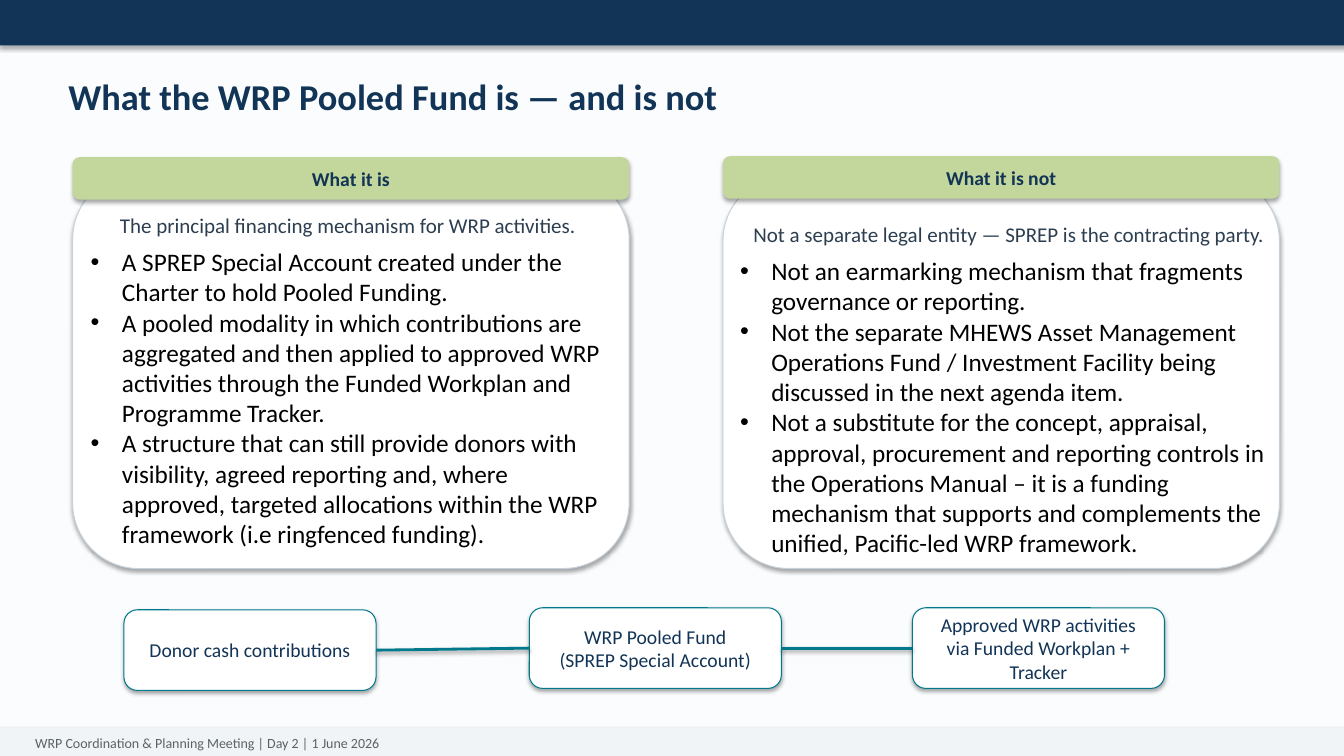
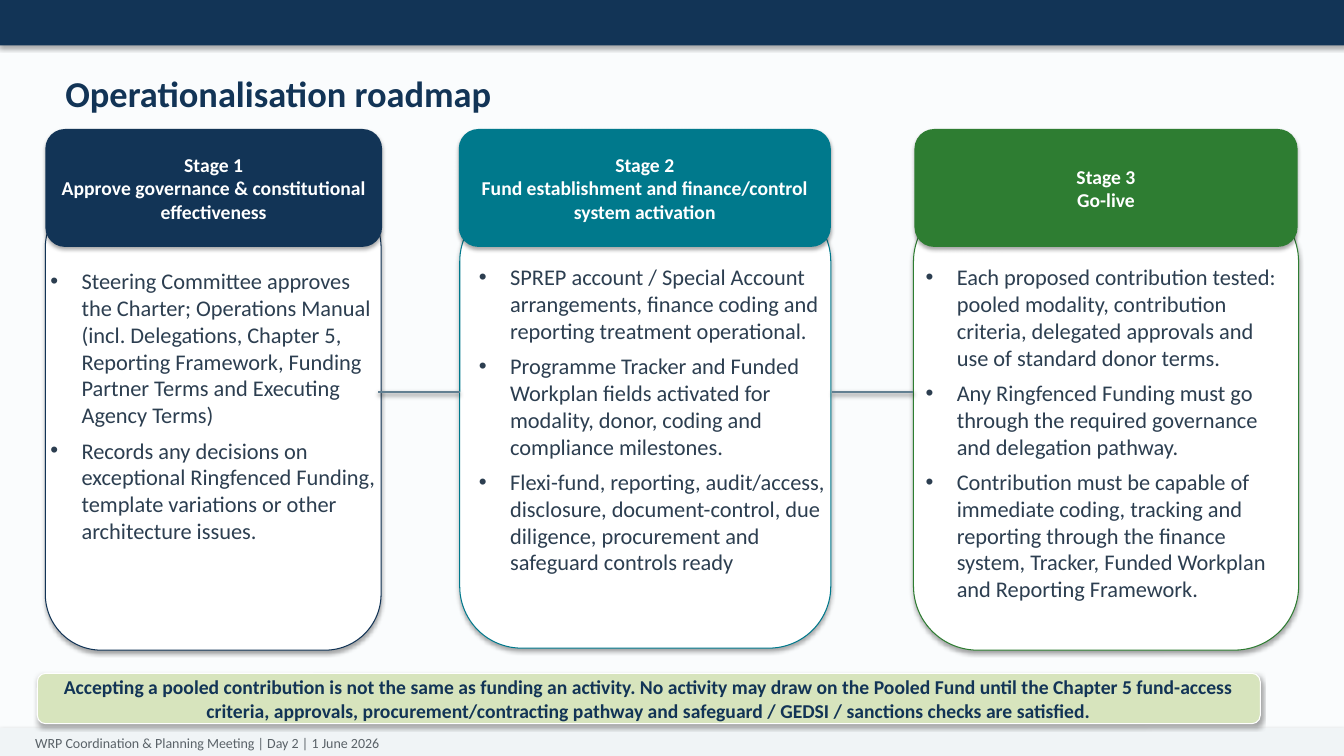
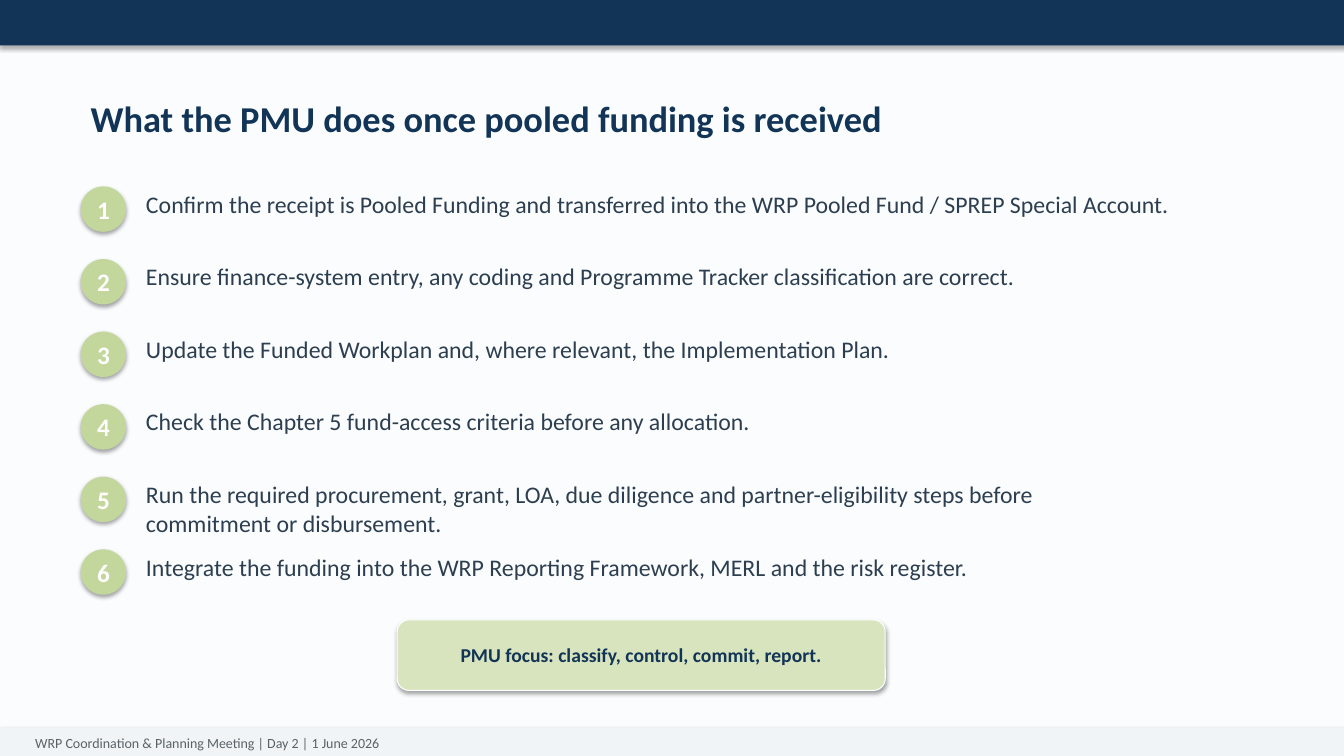
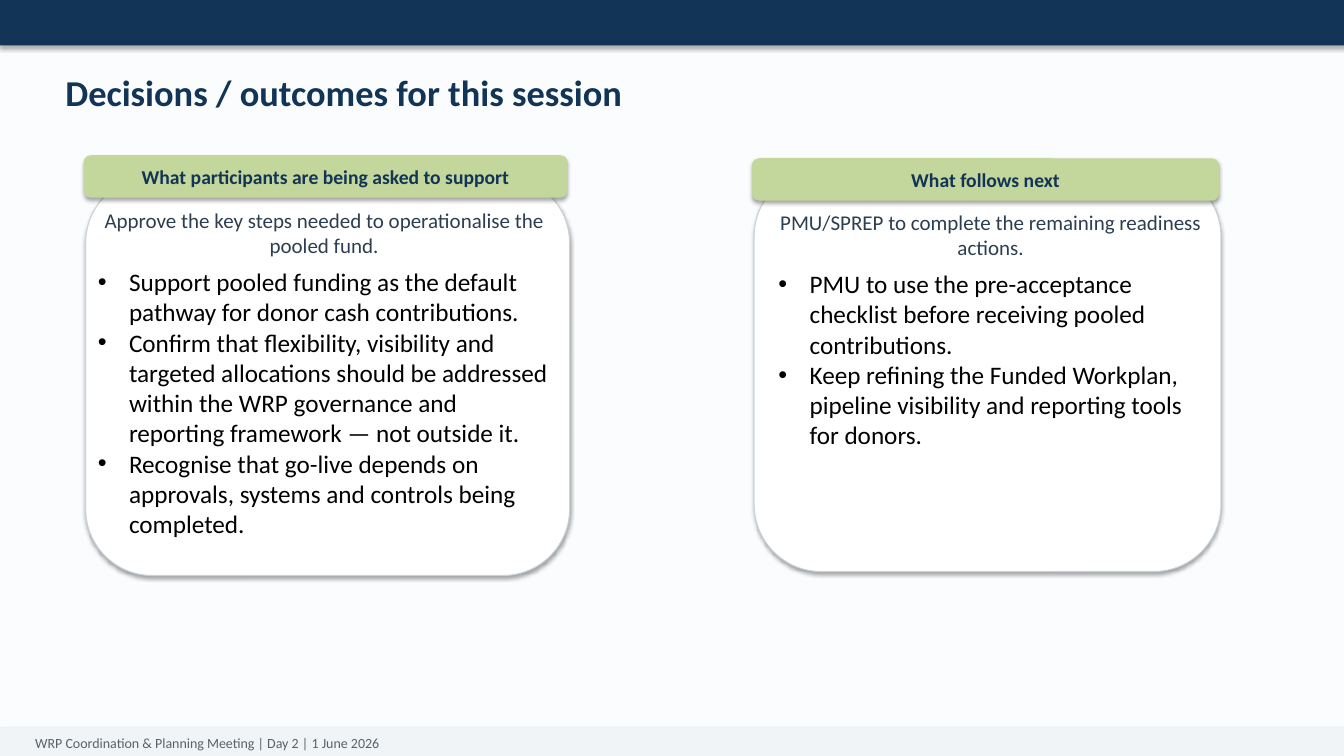
import copy
import dataclasses

import pptx
import pptx.dml.color
import pptx.enum.shapes
import pptx.enum.text
import pptx.oxml
import pptx.oxml.ns
import pptx.util

Inches = pptx.util.Inches
Pt = pptx.util.Pt
Align = pptx.enum.text.PP_ALIGN
Anchor = pptx.enum.text.MSO_ANCHOR
Preset = pptx.enum.shapes.MSO_SHAPE
qn = pptx.oxml.ns.qn


@dataclasses.dataclass(frozen=True)
class Theme:
    font: str = "Calibri"
    background: str = "FAFCFD"
    navy: str = "123456"
    teal: str = "00798C"
    green: str = "2E7D32"
    lime: str = "C3D69B"
    pale_lime: str = "D7E4BD"
    white: str = "FFFFFF"
    black: str = "000000"
    slate: str = "2C3E50"
    steel: str = "627F91"
    card_edge: str = "C8D2DC"
    footer_fill: str = "F0F4F6"
    footer_text: str = "5A6268"
    title_size: float = 26
    body_size: float = 18
    step_size: float = 17
    stage_size: float = 16
    lead_size: float = 15
    label_size: float = 14
    footer_size: float = 10
    thin: float = 0.75
    thick: float = 2
    bullet_indent: float = 0.31
    gap_after: float = 6


THEME = Theme()
WIDTH, HEIGHT = 13.33, 7.5
FOOTER = "WRP Coordination & Planning Meeting | Day 2 | 1 June 2026"
DEFAULT_INSETS = (0.1, 0.05, 0.1, 0.05)
BODY_INSETS = (0.05, 0.02, 0.02, 0.02)


def rgb(color):
    return pptx.dml.color.RGBColor.from_string(color)


def write_text(frame, text, size=THEME.label_size, color=THEME.navy, bold=False,
               align=Align.LEFT, after=0, bullet=False):
    para = frame.paragraphs[0]
    if para.runs:
        para = frame.add_paragraph()
    if bullet:
        properties = para._p.get_or_add_pPr()
        indent = Inches(THEME.bullet_indent)
        properties.set("marL", str(indent))
        properties.set("indent", str(-indent))
        pptx.oxml.ns  
        for tag, name, value in (("a:buFont", "typeface", "Arial"), ("a:buChar", "char", "•")):
            properties.append(pptx.oxml.parse_xml(
                f'<{tag} {pptx.oxml.ns.nsdecls("a")} {name}="{value}"/>'))
    para.text = text
    para.alignment = align
    para.space_after = Pt(after)
    for span in para.runs:
        span.font.name = THEME.font
        span.font.size = Pt(size)
        span.font.bold = bold
        span.font.color.rgb = rgb(color)
    for line_break in para._p.findall(qn("a:br")):
        line_break.insert(0, copy.deepcopy(para.runs[0]._r.rPr))


class DeckBuilder:
    def __init__(self, theme):
        self.theme = theme
        self.deck = pptx.Presentation()
        self.deck.slide_width = Inches(WIDTH)
        self.deck.slide_height = Inches(HEIGHT)
        self.page = None

    def add_page(self, title, left, top):
        theme = self.theme
        self.page = self.deck.slides.add_slide(self.deck.slide_layouts[6])
        fill = self.page.background.fill
        fill.solid()
        fill.fore_color.rgb = rgb(theme.background)
        self.shape((0, 0, WIDTH, 0.45), theme.navy, preset=Preset.RECTANGLE)
        self.shape((0, 7.22, WIDTH, 0.28), theme.footer_fill, FOOTER,
                   preset=Preset.RECTANGLE, insets=(0.35, 0.06, 0.1, 0.05),
                   size=theme.footer_size, color=theme.footer_text, align=Align.LEFT)
        frame = self.text_frame((left, top, 11.5, 0.8))
        write_text(frame, title, size=theme.title_size, bold=True)

    def cast_shadow(self, item, distance, opacity):
        properties = item._element.spPr
        for effects in properties.findall(qn("a:effectLst")):
            properties.remove(effects)
        properties.append(pptx.oxml.parse_xml(
            f'<a:effectLst {pptx.oxml.ns.nsdecls("a")}>'
            f'<a:outerShdw blurRad="{Pt(3.1)}" dist="{Pt(distance)}" dir="5400000" rotWithShape="0">'
            f'<a:srgbClr val="{self.theme.black}"><a:alpha val="{opacity * 1000}"/></a:srgbClr>'
            '</a:outerShdw></a:effectLst>'))

    def set_frame(self, frame, insets):
        frame.word_wrap = True
        frame.margin_left, frame.margin_top, frame.margin_right, frame.margin_bottom = map(Inches, insets)

    def shape(self, place, fill, text="", edge=None, preset=Preset.ROUNDED_RECTANGLE,
              insets=DEFAULT_INSETS, align=Align.CENTER, **style):
        box = self.page.shapes.add_shape(preset, *map(Inches, place))
        box.shadow.inherit = False
        box.fill.solid()
        box.fill.fore_color.rgb = rgb(fill)
        if edge:
            box.line.color.rgb = rgb(edge)
            box.line.width = Pt(self.theme.thin)
        else:
            box.line.fill.background()
        self.cast_shadow(box, 1.8, 35)
        if text:
            self.set_frame(box.text_frame, insets)
            box.text_frame.vertical_anchor = Anchor.MIDDLE
            write_text(box.text_frame, text, align=align, **style)
        return box

    def text_frame(self, place, insets=DEFAULT_INSETS):
        frame = self.page.shapes.add_textbox(*map(Inches, place)).text_frame
        self.set_frame(frame, insets)
        return frame

    def connector(self, start, end, color):
        line = self.page.shapes.add_connector(
            pptx.enum.shapes.MSO_CONNECTOR.STRAIGHT, *map(Inches, start + end))
        line.line.color.rgb = rgb(color)
        line.line.width = Pt(self.theme.thick)
        self.cast_shadow(line, 1.6, 38)
        return line

    def join(self, first, second, color):
        line = self.connector((0, 0), (1, 1), color)
        line.begin_connect(first, 3)
        line.end_connect(second, 1)

    def panel(self, card, header, body, heading, lead, points):
        theme = self.theme
        self.shape(card, theme.white, edge=theme.card_edge)
        self.shape(header, theme.lime, heading, bold=True)
        frame = self.text_frame(body, BODY_INSETS)
        write_text(frame, lead, size=theme.lead_size, color=theme.slate,
                   align=Align.CENTER, after=theme.gap_after)
        for point in points:
            write_text(frame, point, size=theme.body_size, color=theme.black, bullet=True)

    def stage(self, card, header, body, color, heading, points):
        theme = self.theme
        self.shape(card, theme.white, edge=color)
        self.shape(header, color, heading, color=theme.white, bold=True)
        frame = self.text_frame(body, BODY_INSETS)
        for point in points:
            write_text(frame, point, size=theme.stage_size, color=theme.slate,
                       after=theme.gap_after, bullet=True)

    def step(self, number, text, top, width):
        theme = self.theme
        self.shape((0.8, top, 0.45, 0.45), theme.lime, str(number), preset=Preset.OVAL,
                   size=theme.body_size, color=theme.white, bold=True)
        frame = self.text_frame((1.35, top - 0.02, width, 0.55))
        write_text(frame, text, size=theme.step_size, color=theme.slate)

    def callout(self, place, text):
        self.shape(place, self.theme.pale_lime, text, edge=self.theme.white, bold=True)


def build_definition(builder):
    builder.add_page("What the WRP Pooled Fund is — and is not", 0.58, 0.69)
    builder.panel(
        (0.72, 1.72, 5.52, 3.92), (0.72, 1.56, 5.52, 0.42), (0.85, 2.09, 5.17, 3.41),
        "What it is", "The principal financing mechanism for WRP activities.",
        ["A SPREP Special Account created under the Charter to hold Pooled Funding.",
         "A pooled modality in which contributions are aggregated and then applied to approved WRP "
         "activities through the Funded Workplan and Programme Tracker.",
         "A structure that can still provide donors with visibility, agreed reporting and, where "
         "approved, targeted allocations within the WRP framework (i.e ringfenced funding)."])
    builder.panel(
        (7.17, 1.74, 5.52, 3.9), (7.17, 1.55, 5.52, 0.42), (7.29, 2.18, 5.4, 3.41),
        "What it is not", "Not a separate legal entity — SPREP is the contracting party.",
        ["Not an earmarking mechanism that fragments governance or reporting.",
         "Not the separate MHEWS Asset Management Operations Fund / Investment Facility being "
         "discussed in the next agenda item.",
         "Not a substitute for the concept, appraisal, approval, procurement and reporting controls "
         "in the Operations Manual – it is a funding mechanism that supports and complements the "
         "unified, Pacific-led WRP framework."])
    flow = [
        (1.23, 6.05, "Donor cash contributions"),
        (5.25, 6.03, "WRP Pooled Fund\n(SPREP Special Account)"),
        (9.05, 6.03, "Approved WRP activities\nvia Funded Workplan + Tracker"),
    ]
    boxes = [builder.shape((left, top, 2.5, 0.8), THEME.white, text, edge=THEME.teal)
             for left, top, text in flow]
    for first, second in zip(boxes, boxes[1:]):
        builder.join(first, second, THEME.teal)


def build_roadmap(builder):
    builder.add_page("Operationalisation roadmap", 0.55, 0.66)
    builder.stage(
        (0.45, 1.9, 3.33, 4.55), (0.45, 1.28, 3.34, 1.17), (0.45, 2.63, 3.3, 2.82), THEME.navy,
        "Stage 1\nApprove governance & constitutional effectiveness",
        ["Steering Committee approves the Charter; Operations Manual (incl. Delegations, Chapter 5, "
         "Reporting Framework, Funding Partner Terms and Executing Agency Terms)",
         "Records any decisions on exceptional Ringfenced Funding, template variations or other "
         "architecture issues."])
    builder.stage(
        (4.56, 1.98, 3.68, 4.45), (4.55, 1.28, 3.69, 1.17), (4.7, 2.59, 3.61, 3.17), THEME.teal,
        "Stage 2\nFund establishment and finance/control system activation",
        ["SPREP account / Special Account arrangements, finance coding and reporting treatment "
         "operational.",
         "Programme Tracker and Funded Workplan fields activated for modality, donor, coding and "
         "compliance milestones.",
         "Flexi-fund, reporting, audit/access, disclosure, document-control, due diligence, "
         "procurement and safeguard controls ready"])
    builder.stage(
        (9.06, 1.96, 3.82, 4.49), (9.07, 1.28, 3.8, 1.17), (9.13, 2.59, 3.65, 3.44), THEME.green,
        "Stage 3\nGo-live",
        ["Each proposed contribution tested: pooled modality, contribution criteria, delegated "
         "approvals and use of standard donor terms.",
         "Any Ringfenced Funding must go through the required governance and delegation pathway.",
         "Contribution must be capable of immediate coding, tracking and reporting through the "
         "finance system, Tracker, Funded Workplan and Reporting Framework."])
    for left in (3.75, 8.25):
        builder.connector((left, 3.89), (left + 0.81, 3.89), THEME.steel)
    builder.callout(
        (0.37, 6.68, 12.13, 0.5),
        "Accepting a pooled contribution is not the same as funding an activity. No activity may "
        "draw on the Pooled Fund until the Chapter 5 fund-access criteria, approvals, "
        "procurement/contracting pathway and safeguard / GEDSI / sanctions checks are satisfied.")


def build_steps(builder):
    builder.add_page("What the PMU does once pooled funding is received", 0.8, 0.9)
    steps = [
        ("Confirm the receipt is Pooled Funding and transferred into the WRP Pooled Fund / "
         "SPREP Special Account.", 10.6),
        ("Ensure finance-system entry, any coding and Programme Tracker classification are correct.", 9.2),
        ("Update the Funded Workplan and, where relevant, the Implementation Plan.", 9.2),
        ("Check the Chapter 5 fund-access criteria before any allocation.", 9.2),
        ("Run the required procurement, grant, LOA, due diligence and partner-eligibility steps "
         "before commitment or disbursement.", 9.2),
        ("Integrate the funding into the WRP Reporting Framework, MERL and the risk register.", 9.2),
    ]
    for index, (text, width) in enumerate(steps):
        builder.step(index + 1, text, 1.85 + 0.72 * index, width)
    builder.callout((3.94, 6.15, 4.84, 0.7), "PMU focus: classify, control, commit, report.")


def build_decisions(builder):
    builder.add_page("Decisions / outcomes for this session", 0.55, 0.65)
    builder.panel(
        (0.85, 1.75, 4.8, 3.96), (0.83, 1.54, 4.8, 0.42), (0.92, 2.04, 4.56, 3.36),
        "What participants are being asked to support",
        "Approve the key steps needed to operationalise the pooled fund.",
        ["Support pooled funding as the default pathway for donor cash contributions.",
         "Confirm that flexibility, visibility and targeted allocations should be addressed within "
         "the WRP governance and reporting framework — not outside it.",
         "Recognise that go-live depends on approvals, systems and controls being completed."])
    builder.panel(
        (7.48, 1.68, 4.63, 3.99), (7.46, 1.57, 4.63, 0.42), (7.67, 2.06, 4.28, 2.45),
        "What follows next", "PMU/SPREP to complete the remaining readiness actions.",
        ["PMU to use the pre-acceptance checklist before receiving pooled contributions.",
         "Keep refining the Funded Workplan, pipeline visibility and reporting tools for donors."])


def main():
    builder = DeckBuilder(THEME)
    for build in (build_definition, build_roadmap, build_steps, build_decisions):
        build(builder)
    builder.deck.save("out.pptx")


if __name__ == "__main__":
    main()
